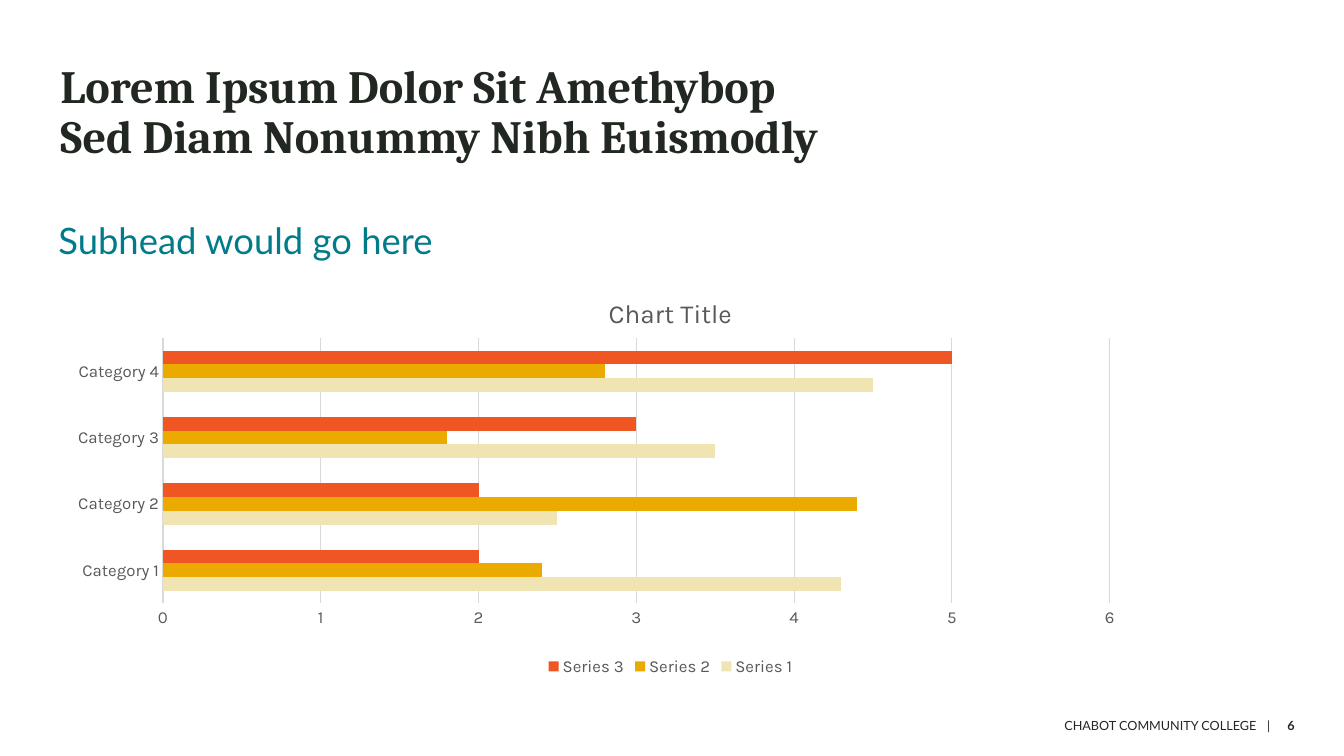
from lxml.etree import SubElement
from pptx import Presentation
from pptx.chart.data import CategoryChartData
from pptx.dml.color import RGBColor
from pptx.enum.chart import XL_CHART_TYPE, XL_LEGEND_POSITION, XL_TICK_MARK
from pptx.enum.text import MSO_ANCHOR
from pptx.oxml import parse_xml
from pptx.oxml.ns import nsdecls, qn
from pptx.util import Inches, Pt

INK = RGBColor(0x21, 0x27, 0x21)
TEAL = RGBColor(0x00, 0x7B, 0x89)
GRAY = RGBColor(0x59, 0x59, 0x59)
GRID = RGBColor(0xD9, 0xD9, 0xD9)
CREAM = RGBColor(0xF0, 0xE4, 0xB2)
GOLD = RGBColor(0xEB, 0xAA, 0x00)
ORANGE = RGBColor(0xF0, 0x56, 0x23)

# Font and paragraph settings are attribute names of the objects they go to.
TEXTS = [
    {"text": "Lorem Ipsum Dolor Sit Amethybop\vSed Diam Nonummy Nibh Euismodly",
     "box": (0.6, 0.4, 9.36, 1.45), "anchor": MSO_ANCHOR.MIDDLE, "inset": (0, 0),
     "font": {"name": "Cambria", "size": Pt(33), "bold": True}, "color": INK,
     "paragraph": {"line_spacing": 0.9}},
    {"text": "Subhead would go here",
     "box": (0.58, 1.9, 11.44, 0.7), "anchor": MSO_ANCHOR.BOTTOM, "inset": (0, 0),
     "font": {"name": "Lato", "size": Pt(26)}, "color": TEAL,
     "paragraph": {"line_spacing": 0.9, "space_after": Pt(6)}},
    {"text": "\tCHABOT COMMUNITY COLLEGE\t|",
     "box": (8.22, 7, 4.5, 0.4), "anchor": MSO_ANCHOR.MIDDLE, "inset": (0.1, 0.05),
     "font": {"name": "Lato", "size": Pt(9)}, "color": INK, "right_tabs": (4.14, 4.28)},
    {"text": "6",
     "box": (12.67, 7, 0.51, 0.4), "anchor": MSO_ANCHOR.MIDDLE, "inset": (0.1, 0.05),
     "font": {"name": "Lato", "size": Pt(9), "bold": True}, "color": INK},
]

CHART_BOX = (0.6, 2.76, 12.1, 3.99)
CHART_TITLE = "Chart Title"
PLOT_AREA = {"x": 0.084, "y": 0.149, "w": 0.776, "h": 0.66}
CATEGORIES = ["Category 1", "Category 2", "Category 3", "Category 4"]
SERIES = [
    ("Series 1", (4.3, 2.5, 3.5, 4.5), CREAM),
    ("Series 2", (2.4, 4.4, 1.8, 2.8), GOLD),
    ("Series 3", (2, 2, 3, 5), ORANGE),
]


def set_attributes(target, values):
    for name, value in values.items():
        setattr(target, name, value)


def set_font(font, values, color):
    set_attributes(font, values)
    font.color.rgb = color


def add_text(slide, item):
    frame = slide.shapes.add_textbox(*map(Inches, item["box"])).text_frame
    side, top = map(Inches, item["inset"])
    set_attributes(frame, {
        "word_wrap": True, "vertical_anchor": item["anchor"],
        "margin_left": side, "margin_right": side,
        "margin_top": top, "margin_bottom": top,
    })
    paragraph = frame.paragraphs[0]
    paragraph.text = item["text"]
    set_attributes(paragraph, item.get("paragraph", {}))
    if "right_tabs" in item:
        properties = paragraph._p.get_or_add_pPr()
        tab_list = SubElement(properties, qn("a:tabLst"))
        for position in item["right_tabs"]:
            SubElement(tab_list, qn("a:tab"), pos=str(Inches(position)), algn="r")
    for run in paragraph.runs:
        set_font(run.font, item["font"], item["color"])


def place_plot_area(chart):
    """Fix the inner plot area as fractions of the chart."""
    plot_area = chart._chartSpace.chart.plotArea
    for layout in plot_area.findall(qn("c:layout")):
        plot_area.remove(layout)
    modes = '<c:xMode val="edge"/><c:yMode val="edge"/>'
    sizes = "".join(f'<c:{key} val="{value}"/>' for key, value in PLOT_AREA.items())
    plot_area.insert(0, parse_xml(
        f'<c:layout {nsdecls("c")}><c:manualLayout><c:layoutTarget val="inner"/>'
        f"{modes}{sizes}</c:manualLayout></c:layout>"))


def add_bar_chart(slide):
    data = CategoryChartData()
    data.categories = CATEGORIES
    for name, values, _ in SERIES:
        data.add_series(name, values)
    chart = slide.shapes.add_chart(
        XL_CHART_TYPE.BAR_CLUSTERED, *map(Inches, CHART_BOX), data).chart
    set_font(chart.font, {"name": "Karla", "size": Pt(12)}, GRAY)

    title = chart.chart_title
    title.text_frame.text = CHART_TITLE
    title.include_in_layout = False
    set_font(title.text_frame.paragraphs[0].runs[0].font,
             {"name": "Karla", "size": Pt(18.6), "bold": False}, GRAY)

    plot = chart.plots[0]
    set_attributes(plot, {"gap_width": 182, "vary_by_categories": False})
    for series, (_, _, color) in zip(plot.series, SERIES):
        series.format.fill.solid()
        series.format.fill.fore_color.rgb = color

    for axis in (chart.category_axis, chart.value_axis):
        set_attributes(axis, {"major_tick_mark": XL_TICK_MARK.NONE,
                              "minor_tick_mark": XL_TICK_MARK.NONE})
        set_font(axis.tick_labels.font, {"name": "Karla", "size": Pt(12)}, GRAY)
    set_attributes(chart.value_axis, {"minimum_scale": 0, "maximum_scale": 6,
                                      "major_unit": 1, "has_major_gridlines": True})
    chart.value_axis.format.line.fill.background()
    for lined in (chart.category_axis, chart.value_axis.major_gridlines):
        lined.format.line.color.rgb = GRID
        lined.format.line.width = Pt(0.75)

    chart.has_legend = True
    set_attributes(chart.legend, {"position": XL_LEGEND_POSITION.BOTTOM,
                                  "include_in_layout": False})
    set_font(chart.legend.font, {"name": "Karla", "size": Pt(12)}, GRAY)
    place_plot_area(chart)


def main():
    presentation = Presentation()
    presentation.slide_width = Inches(13.33)
    presentation.slide_height = Inches(7.5)
    slide = presentation.slides.add_slide(presentation.slide_layouts[6])
    for item in TEXTS:
        add_text(slide, item)
    add_bar_chart(slide)
    presentation.save("out.pptx")


if __name__ == "__main__":
    main()
